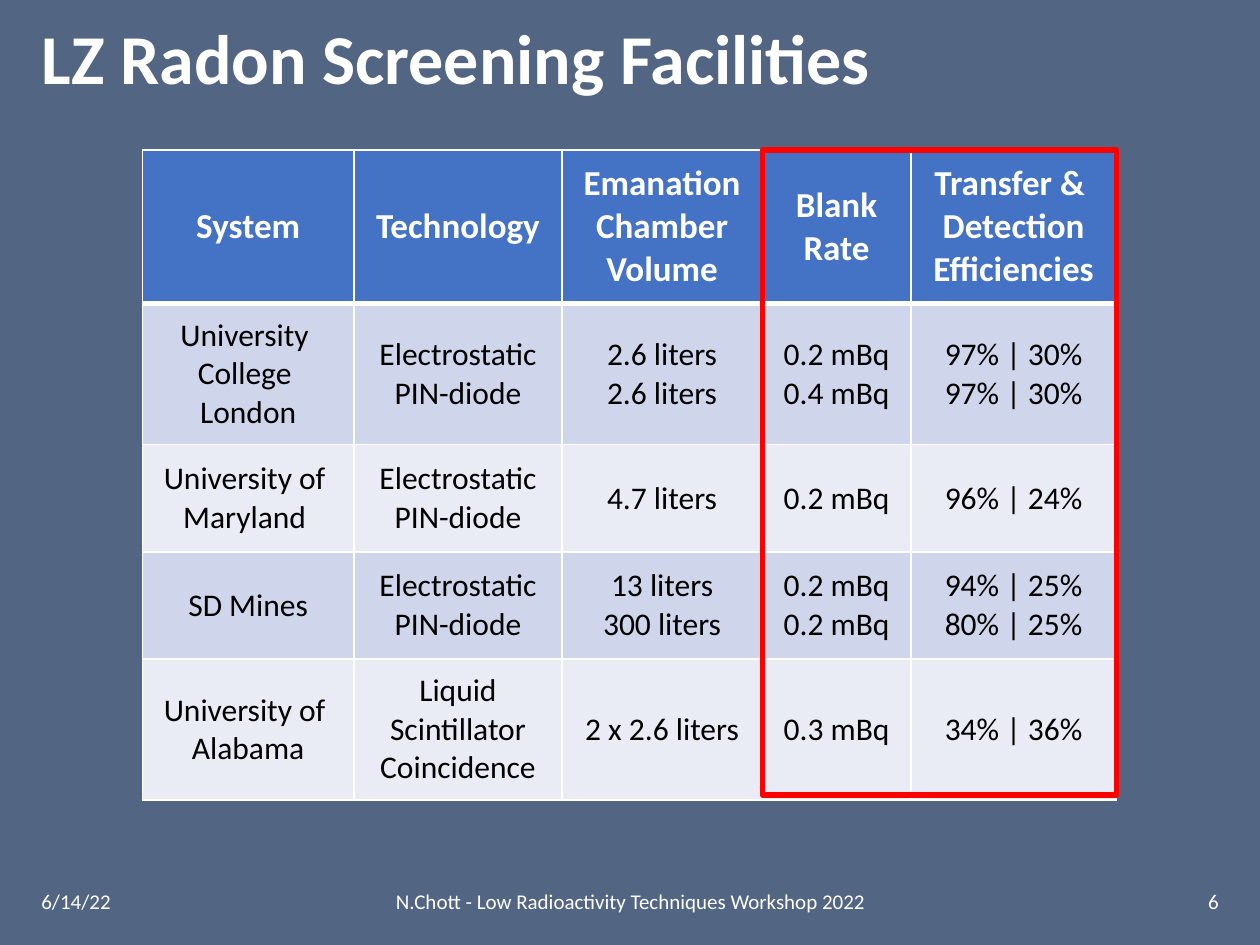
from dataclasses import dataclass
from lxml import etree
from pptx import Presentation
from pptx.dml.color import RGBColor
from pptx.enum.shapes import MSO_SHAPE
from pptx.enum.text import MSO_ANCHOR, PP_ALIGN
from pptx.oxml.ns import qn
from pptx.util import Inches, Pt

LEFT, MID, RIGHT = PP_ALIGN.LEFT, PP_ALIGN.CENTER, PP_ALIGN.RIGHT
CENTER = MSO_ANCHOR.MIDDLE
RECT = MSO_SHAPE.RECTANGLE
FONT = "Calibri"
COLORS = {
    "back": "526582", "white": "FFFFFF", "black": "000000",
    "head": "4472C4", "odd": "CFD5EA", "even": "E9EBF5", "mark": "FF0000",
}
WIDE, HIGH = 100, 75
UNIT = Inches(10) / WIDE


@dataclass
class Box:
    x: float
    y: float
    w: float
    h: float

    def place(self) -> list[int]:
        return [unit(v) for v in (self.x, self.y, self.w, self.h)]


@dataclass
class Style:
    size: int
    color: str = "white"
    bold: bool = False
    align: int = MID


@dataclass
class Note:
    text: str
    box: Box
    align: int


COLS = [16.8, 16.5, 15.9, 11.8, 16.3]
ROWS = [12.2, 11.2, 8.5, 8.5, 11.2]
GRID = Box(11.3, 11.9, sum(COLS), sum(ROWS))
MARKED = 3
PIN = "Electrostatic\nPIN-diode"
CELLS = [
    ["System", "Technology", "Emanation\nChamber\nVolume", "Blank\nRate",
     "Transfer & \nDetection\nEfficiencies"],
    ["University \nCollege \nLondon", PIN, "2.6 liters\n2.6 liters",
     "0.2 mBq\n0.4 mBq", "97% | 30%\n97% | 30%"],
    ["University of \nMaryland ", PIN, "4.7 liters", "0.2 mBq", "96% | 24%"],
    ["SD Mines", PIN, "13 liters\n300 liters", "0.2 mBq\n0.2 mBq",
     "94% | 25%\n80% | 25%"],
    ["University of \nAlabama", "Liquid\nScintillator\nCoincidence",
     "2 x 2.6 liters", "0.3 mBq", "34% | 36%"],
]
FOOT, DEEP = 69.5, 4
NOTES = [
    Note("6/14/22", Box(2.3, FOOT, 16.8, DEEP), LEFT),
    Note("N.Chott - Low Radioactivity Techniques Workshop 2022",
         Box(21, FOOT, 58.1, DEEP), MID),
    Note("6", Box(80.9, FOOT, 16.8, DEEP), RIGHT),
]


def unit(size: float) -> int:
    return round(size * UNIT)


def tint(name: str) -> RGBColor:
    return RGBColor.from_string(COLORS[name])


def write(frame, text: str, style: Style) -> None:
    frame.word_wrap = True
    frame.vertical_anchor = CENTER
    para = frame.paragraphs[0]
    para.text = text
    para.alignment = style.align
    font = para.font
    font.name, font.size, font.bold = FONT, Pt(style.size), style.bold
    font.color.rgb = tint(style.color)


def edge(cell, lower: int) -> None:
    props = cell._tc.get_or_add_tcPr()
    sides = {"lnL": 1, "lnR": 1, "lnT": 1, "lnB": lower}
    for spot, (side, width) in enumerate(sides.items()):
        line = etree.Element(qn(f"a:{side}"), w=str(Pt(width)))
        fill = etree.SubElement(line, qn("a:solidFill"))
        etree.SubElement(fill, qn("a:srgbClr"), val=COLORS["white"])
        props.insert(spot, line)


def fill_cell(cell, text: str, row: int) -> None:
    head = row == 0
    cell.margin_left = cell.margin_right = Inches(0.14)
    cell.margin_top = cell.margin_bottom = Inches(0.1)
    style = Style(20, bold=True) if head else Style(18, "black")
    write(cell.text_frame, text, style)
    cell.vertical_anchor = CENTER
    cell.fill.solid()
    cell.fill.fore_color.rgb = tint(
        "head" if head else "odd" if row % 2 else "even")
    edge(cell, 3 if head else 1)


def draw_table(slide) -> None:
    table = slide.shapes.add_table(len(ROWS), len(COLS), *GRID.place()).table
    for col, width in zip(table.columns, COLS):
        col.width = unit(width)
    for row, height in zip(table.rows, ROWS):
        row.height = unit(height)
    for r, texts in enumerate(CELLS):
        for c, text in enumerate(texts):
            fill_cell(table.cell(r, c), text, r)


def draw_mark(slide) -> None:
    box = Box(GRID.x + sum(COLS[:MARKED]), GRID.y, sum(COLS[MARKED:]), 51.2)
    mark = slide.shapes.add_shape(RECT, *box.place())
    mark.shadow.inherit = False
    mark.fill.background()
    mark.line.color.rgb = tint("mark")
    mark.line.width = Pt(3)


def draw_title(slide) -> None:
    title = slide.shapes.title
    box = Box(2.3, 1.2, 95.5, 7.4)
    title.left, title.top, title.width, title.height = box.place()
    write(title.text_frame, "LZ Radon Screening Facilities",
          Style(40, bold=True, align=LEFT))
    title.text_frame.paragraphs[0].line_spacing = 0.9


def draw_note(slide, note: Note) -> None:
    shape = slide.shapes.add_textbox(*note.box.place())
    write(shape.text_frame, note.text, Style(12, align=note.align))


def main() -> None:
    deck = Presentation()
    deck.slide_width, deck.slide_height = unit(WIDE), unit(HIGH)
    slide = deck.slides.add_slide(deck.slide_layouts[5])
    slide.background.fill.solid()
    slide.background.fill.fore_color.rgb = tint("back")
    draw_title(slide)
    for note in NOTES:
        draw_note(slide, note)
    draw_table(slide)
    draw_mark(slide)
    deck.save("out.pptx")


if __name__ == "__main__":
    main()
